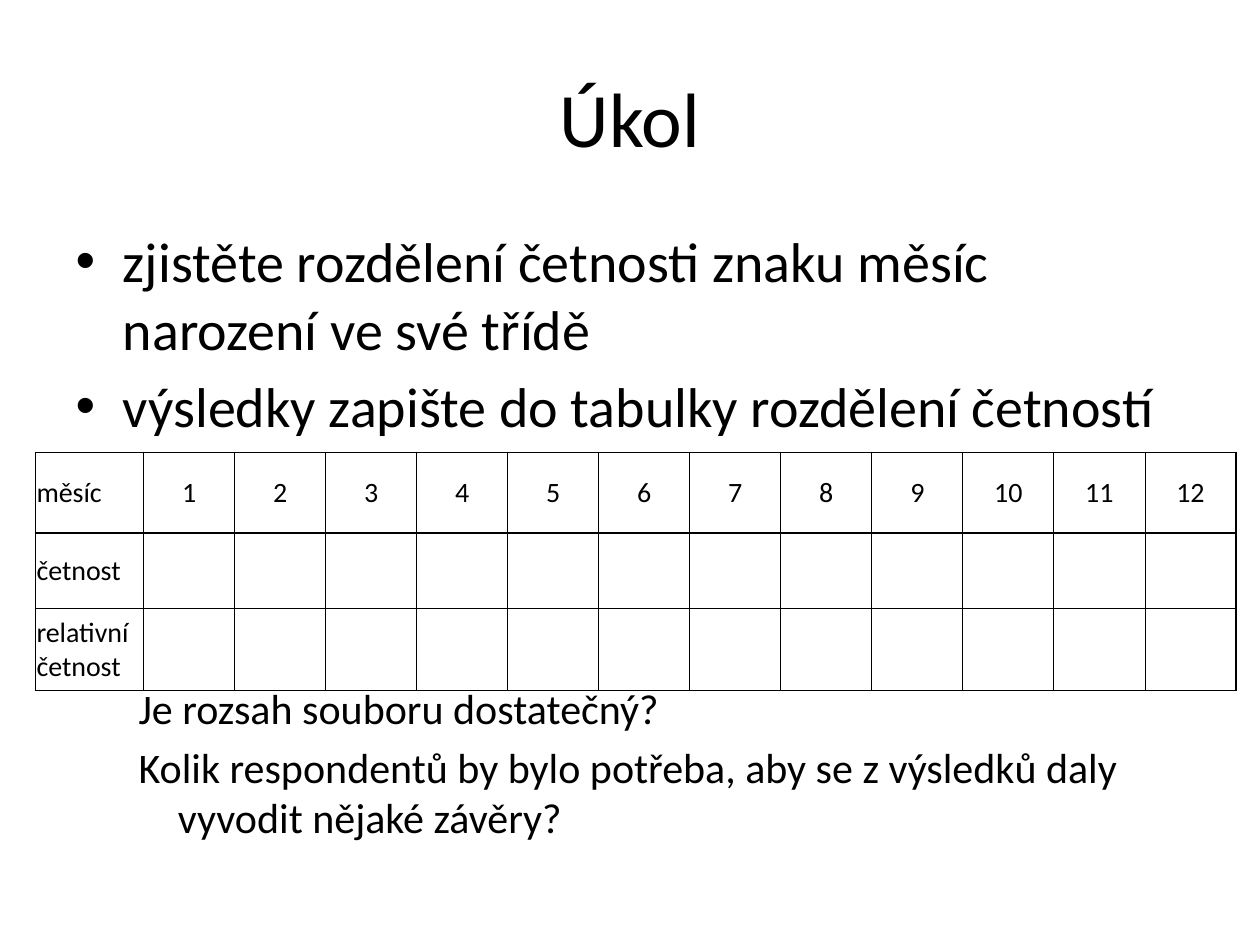
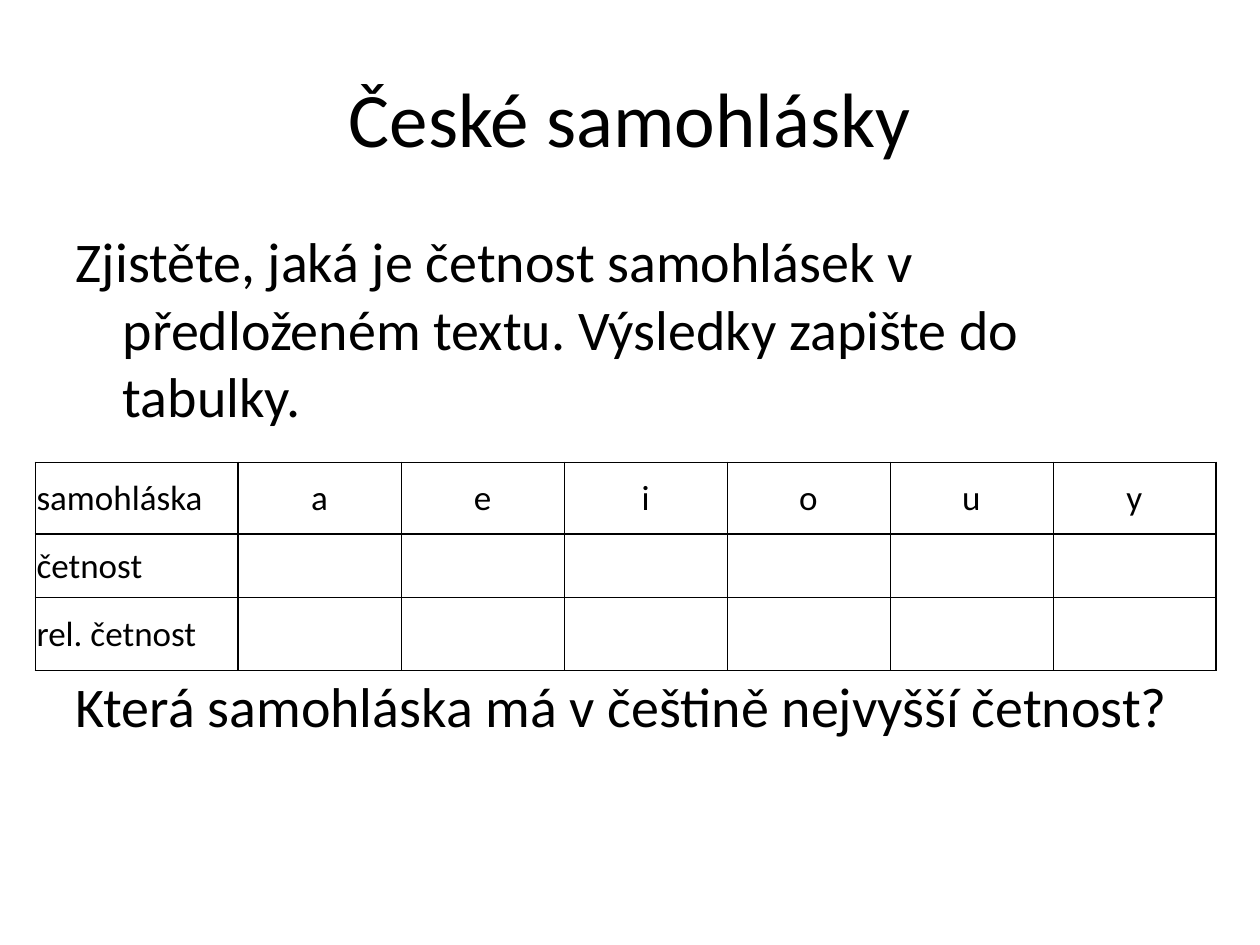
from dataclasses import dataclass

from lxml.etree import SubElement
from pptx import Presentation
from pptx.dml.color import RGBColor
from pptx.enum.text import MSO_ANCHOR, MSO_AUTO_SIZE, PP_ALIGN
from pptx.oxml.ns import qn
from pptx.util import Emu, Pt

PX = 9144


@dataclass(frozen=True)
class Theme:
    font: str = "Calibri"
    ink: str = "000000"
    paper: str = "FFFFFF"
    title: int = 44
    body: int = 32
    question: int = 24
    heavy: float = 1
    thin: float = 0.5


@dataclass(frozen=True)
class Box:
    left: int
    top: int
    width: int
    height: int


@dataclass(frozen=True)
class Para:
    text: str
    size: int
    before: int
    level: int = 0
    bullet: bool = False


@dataclass(frozen=True)
class FrequencyTable:
    left: int
    top: int
    width: int
    label_width: int
    row_heights: tuple[int, ...]
    labels: tuple[str, ...]
    values: tuple[str, ...]
    size: int


@dataclass(frozen=True)
class Task:
    title: str
    paras: tuple[Para, ...]
    table: FrequencyTable


THEME = Theme()
TITLE_BOX = Box(50, 30, 900, 125)
BODY_BOX = Box(50, 175, 900, 495)
TABLE_GAP = 139

TASKS = (
    Task(
        "Úkol",
        (
            Para("zjistěte rozdělení četnosti znaku měsíc narození ve své třídě",
                 THEME.body, 6, bullet=True),
            Para("výsledky zapište do tabulky rozdělení četností",
                 THEME.body, 6, bullet=True),
            Para("Je rozsah souboru dostatečný?", THEME.question, TABLE_GAP, level=1),
            Para("Kolik respondentů by bylo potřeba, aby se z výsledků daly "
                 "vyvodit nějaké závěry?", THEME.question, 5, level=1),
        ),
        FrequencyTable(28, 359, 953, 86, (64, 60, 65),
                       ("měsíc", "četnost", "relativní četnost"),
                       tuple(str(month) for month in range(1, 13)), 16),
    ),
    Task(
        "České samohlásky",
        (
            Para("Zjistěte, jaká je četnost samohlásek v předloženém textu. "
                 "Výsledky zapište do tabulky.", THEME.body, 6),
            Para("Která samohláska má v češtině nejvyšší četnost?",
                 THEME.body, TABLE_GAP),
        ),
        FrequencyTable(28, 367, 937, 161, (57, 50, 58),
                       ("samohláska", "četnost", "rel. četnost"),
                       tuple("aeiouy"), 20),
    ),
)


def px(length: float) -> Emu:
    return Emu(round(length * PX))


def place(sp, box: Box) -> None:
    sp.left, sp.top = px(box.left), px(box.top)
    sp.width, sp.height = px(box.width), px(box.height)
    sp.text_frame.word_wrap = True
    sp.text_frame.auto_size = MSO_AUTO_SIZE.NONE


def add_run(p, text: str, size: int) -> None:
    r = p.add_run()
    r.text = text
    r.font.name = THEME.font
    r.font.size = Pt(size)
    r.font.bold = False
    r.font.color.rgb = RGBColor.from_string(THEME.ink)


def fill_title(sp, text: str) -> None:
    place(sp, TITLE_BOX)
    sp.text_frame.vertical_anchor = MSO_ANCHOR.MIDDLE
    p = sp.text_frame.paragraphs[0]
    p.alignment = PP_ALIGN.CENTER
    add_run(p, text, THEME.title)


def fill_body(sp, paras: tuple[Para, ...]) -> None:
    place(sp, BODY_BOX)
    tf = sp.text_frame
    for i, para in enumerate(paras):
        p = tf.add_paragraph() if i else tf.paragraphs[0]
        p.level = para.level
        p.space_before = Pt(para.before)
        if not para.bullet:
            SubElement(p._p.get_or_add_pPr(), qn("a:buNone"))
        add_run(p, para.text, para.size)


def edge_width(edge: int, count: int) -> float:
    return THEME.heavy if edge in (0, 1, count) else THEME.thin


def add_borders(cell, row: int, col: int, rows: int, cols: int) -> None:
    tcPr = cell._tc.get_or_add_tcPr()
    widths = {
        "L": edge_width(col, cols),
        "R": edge_width(col + 1, cols),
        "T": edge_width(row, rows),
        "B": edge_width(row + 1, rows),
    }
    for side, width in widths.items():
        ln = SubElement(tcPr, qn(f"a:ln{side}"), w=str(Pt(width)))
        fill = SubElement(ln, qn("a:solidFill"))
        SubElement(fill, qn("a:srgbClr"), val=THEME.ink)


def add_frequency_table(s, ft: FrequencyTable) -> None:
    rows, cols = len(ft.labels), len(ft.values) + 1
    tbl = s.shapes.add_table(rows, cols, px(ft.left), px(ft.top), px(ft.width),
                             px(sum(ft.row_heights))).table
    tbl.first_row = tbl.horz_banding = False
    value_width = (ft.width - ft.label_width) / len(ft.values)
    for col in range(cols):
        tbl.columns[col].width = px(value_width if col else ft.label_width)
    for row, height in enumerate(ft.row_heights):
        tbl.rows[row].height = px(height)
        for col in range(cols):
            cell = tbl.cell(row, col)
            cell.margin_left = cell.margin_right = cell.margin_top = px(1)
            cell.margin_bottom = px(0)
            cell.vertical_anchor = MSO_ANCHOR.MIDDLE
            add_borders(cell, row, col, rows, cols)
            cell.fill.background()
            p = cell.text_frame.paragraphs[0]
            if col == 0:
                add_run(p, ft.labels[row], ft.size)
            elif row == 0:
                p.alignment = PP_ALIGN.CENTER
                add_run(p, ft.values[col - 1], ft.size)


def add_task(prs, task: Task) -> None:
    s = prs.slides.add_slide(prs.slide_layouts[1])
    s.background.fill.solid()
    s.background.fill.fore_color.rgb = RGBColor.from_string(THEME.paper)
    fill_title(s.shapes.title, task.title)
    fill_body(s.placeholders[1], task.paras)
    add_frequency_table(s, task.table)


def main() -> None:
    prs = Presentation()
    prs.slide_width, prs.slide_height = px(1000), px(750)
    for task in TASKS:
        add_task(prs, task)
    prs.save("out.pptx")


if __name__ == "__main__":
    main()
